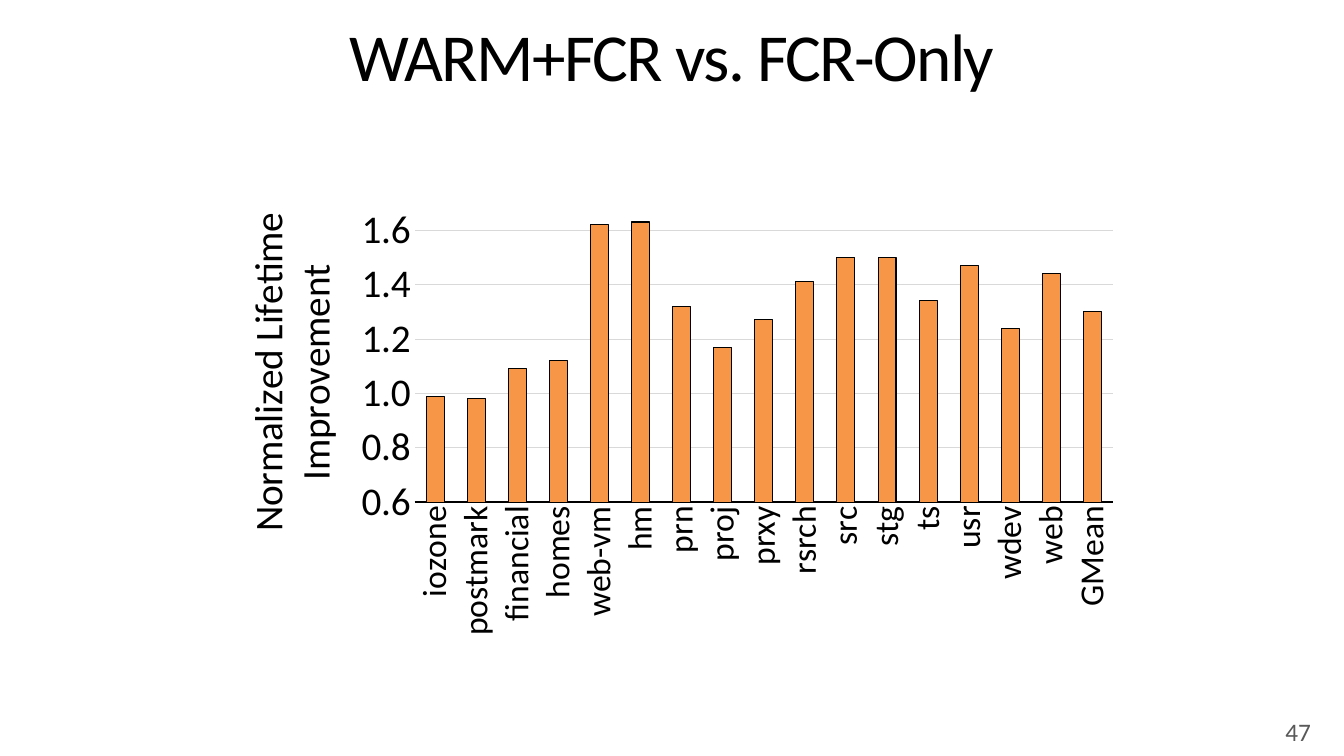
from dataclasses import dataclass
from typing import Any

from lxml import etree
from pptx import Presentation
from pptx.chart.data import CategoryChartData
from pptx.dml.color import RGBColor
from pptx.enum.chart import XL_CHART_TYPE, XL_TICK_MARK
from pptx.enum.text import MSO_ANCHOR, PP_ALIGN
from pptx.oxml.ns import qn
from pptx.util import Inches, Pt

COLUMN = XL_CHART_TYPE.COLUMN_CLUSTERED
NO_TICK = XL_TICK_MARK.NONE
MIDDLE = MSO_ANCHOR.MIDDLE
CENTER = PP_ALIGN.CENTER
RIGHT = PP_ALIGN.RIGHT
WIDE, HIGH = Inches(13.33), Inches(7.5)
FACE = "Calibri"
BLACK, GRAY, GRID, ORANGE = "000000", "595959", "D9D9D9", "F79646"
UPRIGHT = "-5400000"


@dataclass
class Box:
    left: float
    top: float
    width: float
    height: float

    def place(self) -> tuple[int, int, int, int]:
        return (round(self.left * WIDE), round(self.top * HIGH),
                round(self.width * WIDE), round(self.height * HIGH))


@dataclass
class Bar:
    name: str
    gain: float


HEAD = Box(0, 0, 1, 0.1587)
PAGE = Box(0.7577, 0.9413, 0.225, 0.0533)
CHART = Box(0.1673, 0.2413, 0.6662, 0.6187)
BARS = [
    Bar("iozone", 0.99), Bar("postmark", 0.98), Bar("financial", 1.09),
    Bar("homes", 1.12), Bar("web-vm", 1.62), Bar("hm", 1.63),
    Bar("prn", 1.32), Bar("proj", 1.17), Bar("prxy", 1.27),
    Bar("rsrch", 1.41), Bar("src", 1.5), Bar("stg", 1.5),
    Bar("ts", 1.34), Bar("usr", 1.47), Bar("wdev", 1.24),
    Bar("web", 1.44), Bar("GMean", 1.3),
]


def paint(code: str) -> RGBColor:
    return RGBColor.from_string(code)


def style(font: Any, size: float, color: str = BLACK) -> None:
    font.name, font.size, font.bold = FACE, Pt(size), False
    font.color.rgb = paint(color)


def stroke(line: Any, color: str, width: float) -> None:
    line.color.rgb = paint(color)
    line.width = Pt(width)


def write(frame: Any, text: str, *, size: float, color: str = BLACK,
          align: Any = None, space: float | None = None, track: int = 0) -> None:
    frame.word_wrap = True
    frame.vertical_anchor = MIDDLE
    para = frame.paragraphs[0]
    para.alignment, para.line_spacing = align, space
    run = para.add_run()
    run.text = text
    style(run.font, size, color)
    if track:
        run.font._element.set("spc", str(track))


def arrange(node: Any, index: int, **parts: str) -> None:
    for old in node.findall(qn("c:layout")):
        node.remove(old)
    layout = etree.Element(qn("c:layout"))
    manual = etree.SubElement(layout, qn("c:manualLayout"))
    for key, value in parts.items():
        etree.SubElement(manual, qn(f"c:{key}")).set("val", value)
    node.insert(index, layout)


def draw_chart(slide: Any) -> None:
    data = CategoryChartData()
    data.categories = [bar.name for bar in BARS]
    data.add_series("Series 1", [bar.gain for bar in BARS])
    chart = slide.shapes.add_chart(COLUMN, *CHART.place(), data).chart
    chart.has_legend = chart.has_title = False
    style(chart.font, 24)

    plot = chart.plots[0]
    plot.gap_width, plot.overlap = 129, -27
    plot.vary_by_categories = False
    series = plot.series[0]
    series.format.fill.solid()
    series.format.fill.fore_color.rgb = paint(ORANGE)
    stroke(series.format.line, BLACK, 0.75)

    names, gains = chart.category_axis, chart.value_axis
    for axis, size in ((names, 24), (gains, 28)):
        axis.major_tick_mark = axis.minor_tick_mark = NO_TICK
        style(axis.tick_labels.font, size)
    stroke(names.format.line, BLACK, 1.25)
    names._element.find(qn("c:txPr")).find(qn("a:bodyPr")).set("rot", UPRIGHT)

    gains.minimum_scale, gains.maximum_scale, gains.major_unit = 0.6, 1.7, 0.2
    gains.tick_labels.number_format = "#,##0.0"
    gains.tick_labels.number_format_is_linked = False
    gains.format.line.fill.background()
    stroke(gains.major_gridlines.format.line, GRID, 0.75)

    label = gains.axis_title
    write(label.text_frame, "Normalized Lifetime Improvement", size=28, align=CENTER)
    label.text_frame._txBody.find(qn("a:bodyPr")).set("rot", UPRIGHT)
    arrange(label._element, 1, xMode="edge", yMode="edge", x="0.01", y="0.05")
    area = chart._chartSpace.find(qn("c:chart")).find(qn("c:plotArea"))
    arrange(area, 0, layoutTarget="inner", xMode="edge", yMode="edge",
            x="0.212", y="0.044", w="0.78", h="0.64")


def main() -> None:
    deck = Presentation()
    deck.slide_width, deck.slide_height = WIDE, HIGH
    slide = deck.slides.add_slide(deck.slide_layouts[5])
    head = slide.shapes.title
    head.left, head.top, head.width, head.height = HEAD.place()
    write(head.text_frame, "WARM+FCR vs. FCR-Only", size=48,
          align=CENTER, space=0.9, track=-120)
    draw_chart(slide)
    page = slide.shapes.add_textbox(*PAGE.place())
    write(page.text_frame, "47", size=18, color=GRAY, align=RIGHT)
    deck.save("out.pptx")


if __name__ == "__main__":
    main()
